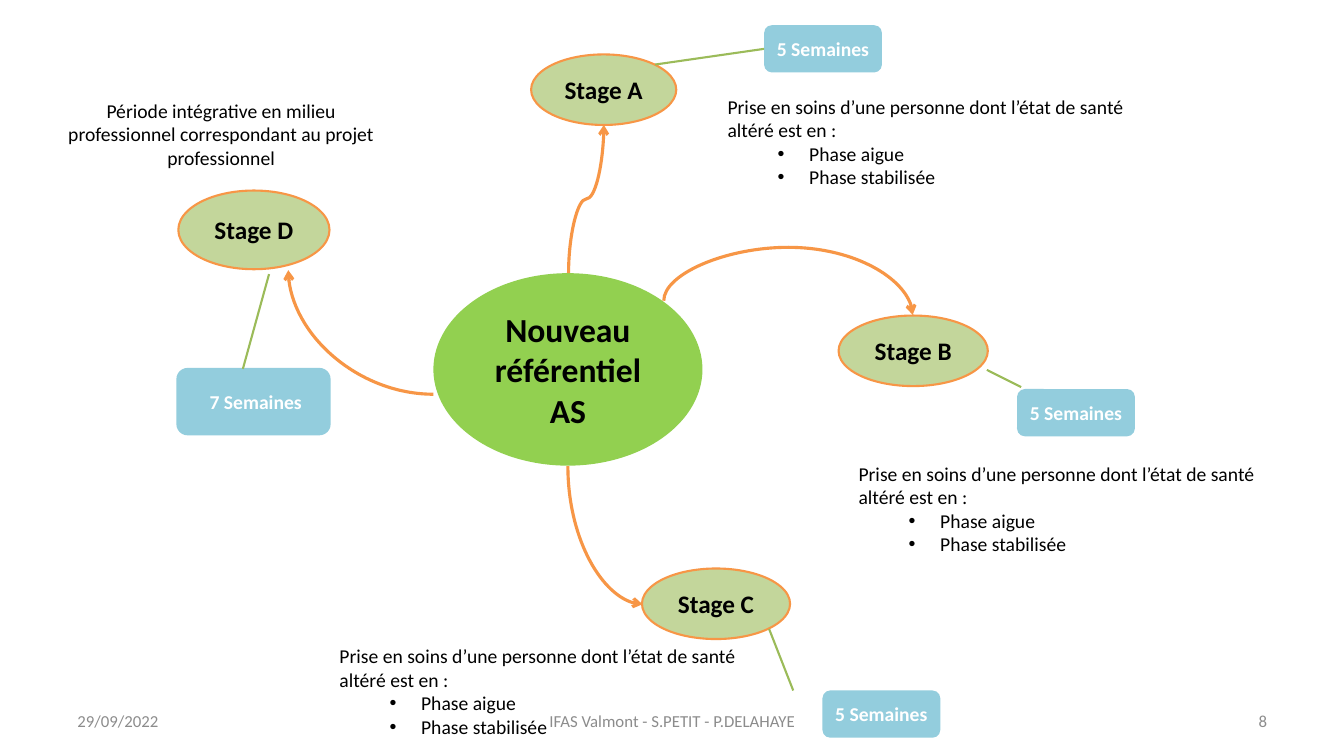
from lxml import etree
from pptx import Presentation
from pptx.dml.color import RGBColor
from pptx.enum import shapes, text
from pptx.oxml.ns import qn
from pptx.util import Pt

BLACK, WHITE, GREY = "000000", "FFFFFF", "8C8C8C"
LIME, SAGE, ORANGE, BLUE, OLIVE = "92D050", "C3D69B", "F79646", "93CDDD", "9BBB59"
OVAL, ROUNDED = shapes.MSO_SHAPE.OVAL, shapes.MSO_SHAPE.ROUNDED_RECTANGLE
LEFT, CENTER, RIGHT = text.PP_ALIGN.LEFT, text.PP_ALIGN.CENTER, text.PP_ALIGN.RIGHT
TOP, MIDDLE = text.MSO_ANCHOR.TOP, text.MSO_ANCHOR.MIDDLE

CORE = ("Nouveau référentiel AS", (309.6, 195.1, 192.2, 137.5))
CARE = "Prise en soins d’une personne dont l’état de santé altéré est en :"
PHASES = ["Phase aigue", "Phase stabilisée"]
PROJECT = "Période intégrative en milieu professionnel correspondant au projet professionnel"

STAGES = [
    dict(name="Stage A", oval=(379.4, 38.9, 103.7, 50.4),
         weeks="5 Semaines", badge=(545.8, 18, 84.2, 33.8),
         link=(468, 46.1, 545.8, 34.6), joined=True,
         intro=CARE, phases=PHASES, note=(512.6, 64.1, 298.8, 74.9), align=LEFT),
    dict(name="Stage B", oval=(599, 225.4, 106.6, 50.4),
         weeks="5 Semaines", badge=(726.5, 277.9, 84.2, 33.8),
         link=(704.9, 264.2, 729.4, 276.5), joined=False,
         intro=CARE, phases=PHASES, note=(606.2, 326.2, 300.2, 74.9), align=LEFT),
    dict(name="Stage C", oval=(458.6, 406.1, 105.8, 50.4),
         weeks="5 Semaines", badge=(587.5, 493.2, 84.2, 33.8),
         link=(549.4, 449.3, 566.6, 493.2), joined=False,
         intro=CARE, phases=PHASES, note=(235.4, 456.5, 308.2, 74.9), align=LEFT),
    dict(name="Stage D", oval=(127.4, 136.1, 108, 56.2),
         weeks=" 7 Semaines", badge=(126, 262.8, 110.2, 48.2),
         link=(192.2, 195.8, 173.5, 263.5), joined=False,
         intro=PROJECT, phases=[], note=(33.1, 67, 249.8, 58.3), align=CENTER),
]

ARROWS = [
    ((365.8, 129.6, 105.8, 25.2), 90, "hv", "curvedConnector3", None),
    ((558, 131, 10.1, 177.8), 270, "h", "curvedConnector3", -378100),
    ((383, 355.7, 98.6, 53.3), 270, "h", "curvedConnector2", None),
    ((205.9, 193, 103.7, 88.6), 180, "", "curvedConnector2", None),
]

FOOTERS = [
    ("29/09/2022", (48.2, 500.4, 223.9, 28.8), LEFT),
    ("IFAS Valmont - S.PETIT - P.DELAHAYE", (328.3, 500.4, 303.8, 28.8), CENTER),
    ("8", (688.3, 500.4, 223.9, 28.8), RIGHT),
]


def color(value):
    return RGBColor.from_string(value)


def points(values):
    return [Pt(value) for value in values]


def write(para, words, size, ink, bold, align):
    para.alignment = align
    span = para.add_run()
    span.text = words
    span.font.name = "Calibri"
    span.font.size = Pt(size)
    span.font.bold = bold
    span.font.color.rgb = color(ink)


def add_bubble(page, kind, place, fill, words, size, ink, border=None):
    bubble = page.shapes.add_shape(kind, *points(place))
    bubble.shadow.inherit = False
    bubble.fill.solid()
    bubble.fill.fore_color.rgb = color(fill)
    if border:
        bubble.line.color.rgb = color(border)
        bubble.line.width = Pt(1.5)
    else:
        bubble.line.fill.background()
    bubble.text_frame.word_wrap = True
    bubble.text_frame.vertical_anchor = MIDDLE
    write(bubble.text_frame.paragraphs[0], words, size, ink, True, CENTER)
    return bubble


def add_text(page, place, words, size, ink, align, anchor, bullets=()):
    box = page.shapes.add_textbox(*points(place))
    frame = box.text_frame
    frame.word_wrap = True
    frame.vertical_anchor = anchor
    write(frame.paragraphs[0], words, size, ink, False, align)
    for bullet in bullets:
        para = frame.add_paragraph()
        para.level = 1
        write(para, bullet, size, ink, False, align)
        layout = para._p.get_or_add_pPr()
        layout.set("marL", str(Pt(58.3)))
        layout.set("indent", str(-Pt(22.5)))
        etree.SubElement(layout, qn("a:buFont")).set("typeface", "Arial")
        etree.SubElement(layout, qn("a:buChar")).set("char", "•")


def add_line(page, kind, ends, ink, width):
    line = page.shapes.add_connector(kind, *points(ends))
    line.line.color.rgb = color(ink)
    line.line.width = Pt(width)
    etree.SubElement(line._element.spPr, qn("a:effectLst"))
    return line


def add_arrow(page, place, turn, flips, preset, bend):
    left, top, width, height = place
    x1, x2 = left, left + width
    y1, y2 = top, top + height
    if "h" in flips:
        x1, x2 = x2, x1
    if "v" in flips:
        y1, y2 = y2, y1
    arrow = add_line(page, shapes.MSO_CONNECTOR.CURVE, (x1, y1, x2, y2), ORANGE, 2.25)
    look = arrow._element.spPr
    look.find(qn("a:xfrm")).set("rot", str(turn * 60000))
    geometry = look.find(qn("a:prstGeom"))
    geometry.set("prst", preset)
    if bend is not None:
        guide = etree.SubElement(geometry.find(qn("a:avLst")), qn("a:gd"))
        guide.set("name", "adj1")
        guide.set("fmla", f"val {bend}")
    etree.SubElement(look.find(qn("a:ln")), qn("a:tailEnd")).set("type", "arrow")


def main():
    deck = Presentation()
    deck.slide_width, deck.slide_height = Pt(960), Pt(540)
    page = deck.slides.add_slide(deck.slide_layouts[6])
    title, place = CORE
    add_bubble(page, OVAL, place, LIME, title, 24, BLACK)
    for stage in STAGES:
        add_bubble(page, OVAL, stage["oval"], SAGE, stage["name"], 18, BLACK, ORANGE)
        badge = add_bubble(page, ROUNDED, stage["badge"], BLUE, stage["weeks"], 14, WHITE)
        link = add_line(page, shapes.MSO_CONNECTOR.STRAIGHT, stage["link"], OLIVE, 1.5)
        if stage["joined"]:
            link.end_connect(badge, 1)
        add_text(page, stage["note"], stage["intro"], 14, BLACK, stage["align"], TOP,
                 stage["phases"])
    for arrow in ARROWS:
        add_arrow(page, *arrow)
    for words, place, align in FOOTERS:
        add_text(page, place, words, 12, GREY, align, MIDDLE)
    deck.save("out.pptx")


if __name__ == "__main__":
    main()
